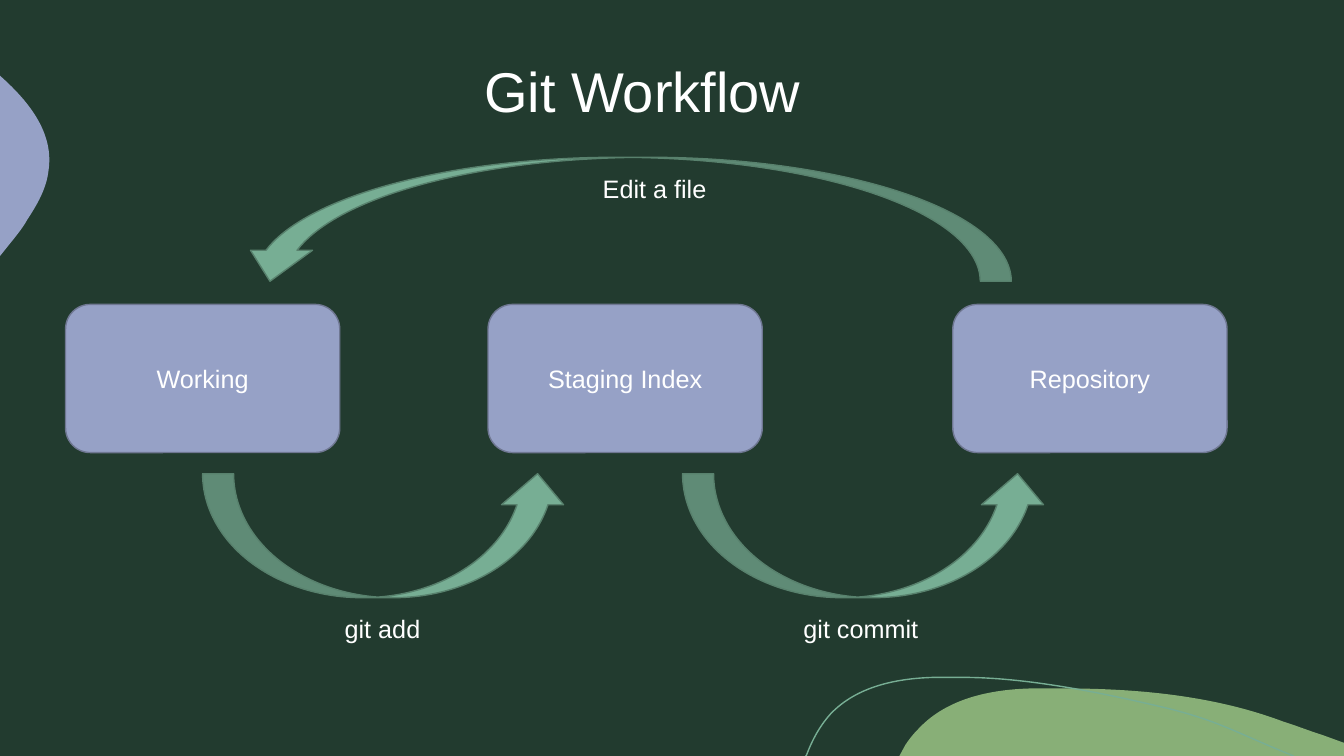
from typing import NamedTuple, Optional

from lxml import etree
from pptx import Presentation
from pptx import util as u
from pptx.dml.color import RGBColor
from pptx.enum import shapes, text
from pptx.oxml.ns import qn

COLORS = {
    "background": "223B2F",
    "white": "FFFFFF",
    "periwinkle": "96A1C6",
    "box_line": "6F7792",
    "leaf": "88AF77",
    "mint": "77AE94",
    "arrow_line": "58816D",
}
FONT = "Arial"

Point = tuple[float, float]


class Blob(NamedTuple):
    """An outline whose segments hold one point (line) or three (Bézier curve)."""
    start: Point
    segments: list[tuple[Point, ...]]
    fill: Optional[str] = None
    line: Optional[str] = None


class Stage(NamedTuple):
    name: str
    left: float


class Arrow(NamedTuple):
    left: float
    top: float
    width: float
    rotation: int = 0


class Label(NamedTuple):
    words: str
    left: float
    top: float
    width: float


BLOBS = [
    Blob((10.54, 6.83), [
        ((11.28, 6.83), (12.04, 6.9), (12.73, 7.16)),
        ((12.86, 7.2), (12.98, 7.25), (13.11, 7.29)),
        ((13.33, 7.37),), ((13.33, 7.5),), ((8.92, 7.5),), ((8.98, 7.39),),
        ((9.02, 7.33), (9.06, 7.28), (9.11, 7.23)),
        ((9.39, 6.93), (9.82, 6.84), (10.23, 6.83)),
        ((10.33, 6.83), (10.43, 6.83), (10.54, 6.83)),
    ], fill="leaf"),
    Blob((0, 0.75), [
        ((0.01, 0.76),),
        ((0.3, 1.02), (0.54, 1.33), (0.48, 1.7)),
        ((0.46, 1.87), (0.37, 2.03), (0.27, 2.18)),
        ((0.24, 2.24), (0.17, 2.33), (0.08, 2.44)),
        ((0, 2.54),),
    ], fill="periwinkle"),
    Blob((7.99, 7.5), [
        ((8, 7.49),),
        ((8.06, 7.33), (8.14, 7.19), (8.24, 7.08)),
        ((8.5, 6.81), (8.89, 6.73), (9.26, 6.72)),
        ((9.55, 6.72),),
        ((10.22, 6.72), (11, 6.89), (11.55, 7.02)),
        ((12.09, 7.15), (12.26, 7.27), (12.83, 7.5)),
    ], line="mint"),
]
STAGES = [Stage("Working", 0.65), Stage("Staging Index", 4.84), Stage("Repository", 9.45)]
ARROWS = [Arrow(2.01, 4.7, 3.63), Arrow(6.77, 4.7, 3.63), Arrow(2.37, 1.56, 7.66, 180)]
LABELS = [
    Label("git add", 3.32, 6.04, 1.03),
    Label("git commit", 7.87, 6.04, 1.44),
    Label("Edit a file", 5.88, 1.67, 1.26),
]


def rgb(name: str) -> RGBColor:
    return RGBColor.from_string(COLORS[name])


def paint(shape, fill: Optional[str] = None, line: Optional[str] = None) -> None:
    shape.shadow.inherit = False
    if fill:
        shape.fill.solid()
        shape.fill.fore_color.rgb = rgb(fill)
    else:
        shape.fill.background()
    if line:
        shape.line.color.rgb = rgb(line)
        shape.line.width = u.Pt(1)
    else:
        shape.line.fill.background()


def write_text(shape, words: str, *, size: int = 18, color: str = "white",
               align=text.PP_ALIGN.CENTER, anchor=text.MSO_ANCHOR.TOP,
               wrap: bool = True, fit=text.MSO_AUTO_SIZE.NONE) -> None:
    frame = shape.text_frame
    frame.word_wrap = wrap
    frame.auto_size = fit
    frame.vertical_anchor = anchor
    paragraph = frame.paragraphs[0]
    paragraph.alignment = align
    run = paragraph.add_run()
    run.text = words
    run.font.name = FONT
    run.font.size = u.Pt(size)
    run.font.color.rgb = rgb(color)


def add_blob(slide, blob: Blob) -> None:
    """Build the outline from its segment ends, then bend the curved segments."""
    ends = [blob.start] + [segment[-1] for segment in blob.segments]
    corners = [(u.Inches(x), u.Inches(y)) for x, y in ends]
    builder = slide.shapes.build_freeform(*corners[0])
    builder.add_line_segments(corners[1:], close=blob.fill is not None)
    shape = builder.convert_to_shape()
    lines = list(shape.element.iter(qn("a:lnTo")))
    for line, segment in zip(lines, blob.segments):
        if len(segment) == 3:
            line.tag = qn("a:cubicBezTo")
            for index, (x, y) in enumerate(segment[:-1]):
                handle = etree.Element(qn("a:pt"), x=str(u.Inches(x) - shape.left),
                                       y=str(u.Inches(y) - shape.top))
                line.insert(index, handle)
    paint(shape, blob.fill, blob.line)


def add_stage(slide, stage: Stage) -> None:
    box = slide.shapes.add_shape(
        shapes.MSO_SHAPE.ROUNDED_RECTANGLE,
        u.Inches(stage.left), u.Inches(3.02), u.Inches(2.72), u.Inches(1.47))
    paint(box, "periwinkle", "box_line")
    write_text(box, stage.name, anchor=text.MSO_ANCHOR.MIDDLE)


def add_arrow(slide, arrow: Arrow) -> None:
    shape = slide.shapes.add_shape(
        shapes.MSO_SHAPE.CURVED_UP_ARROW,
        u.Inches(arrow.left), u.Inches(arrow.top), u.Inches(arrow.width), u.Inches(1.23))
    shape.rotation = arrow.rotation
    paint(shape, "mint", "arrow_line")


def add_label(slide, label: Label) -> None:
    box = slide.shapes.add_textbox(
        u.Inches(label.left), u.Inches(label.top), u.Inches(label.width), u.Inches(0.4))
    write_text(box, label.words, align=text.PP_ALIGN.LEFT, wrap=False,
               fit=text.MSO_AUTO_SIZE.SHAPE_TO_FIT_TEXT)


def add_title(slide, words: str) -> None:
    title = slide.shapes.title
    title.left, title.top = u.Inches(3.04), u.Inches(0.51)
    title.width, title.height = u.Inches(6.66), u.Inches(0.77)
    write_text(title, words, size=40, fit=text.MSO_AUTO_SIZE.SHAPE_TO_FIT_TEXT)


def main() -> None:
    presentation = Presentation()
    presentation.slide_width = u.Inches(13.33)
    presentation.slide_height = u.Inches(7.5)
    slide = presentation.slides.add_slide(presentation.slide_layouts.get_by_name("Title Only"))
    slide.background.fill.solid()
    slide.background.fill.fore_color.rgb = rgb("background")

    for blob in BLOBS:
        add_blob(slide, blob)
    for stage in STAGES:
        add_stage(slide, stage)
    for arrow in ARROWS:
        add_arrow(slide, arrow)
    for label in LABELS:
        add_label(slide, label)
    add_title(slide, "Git Workflow")
    presentation.save("out.pptx")


if __name__ == "__main__":
    main()
